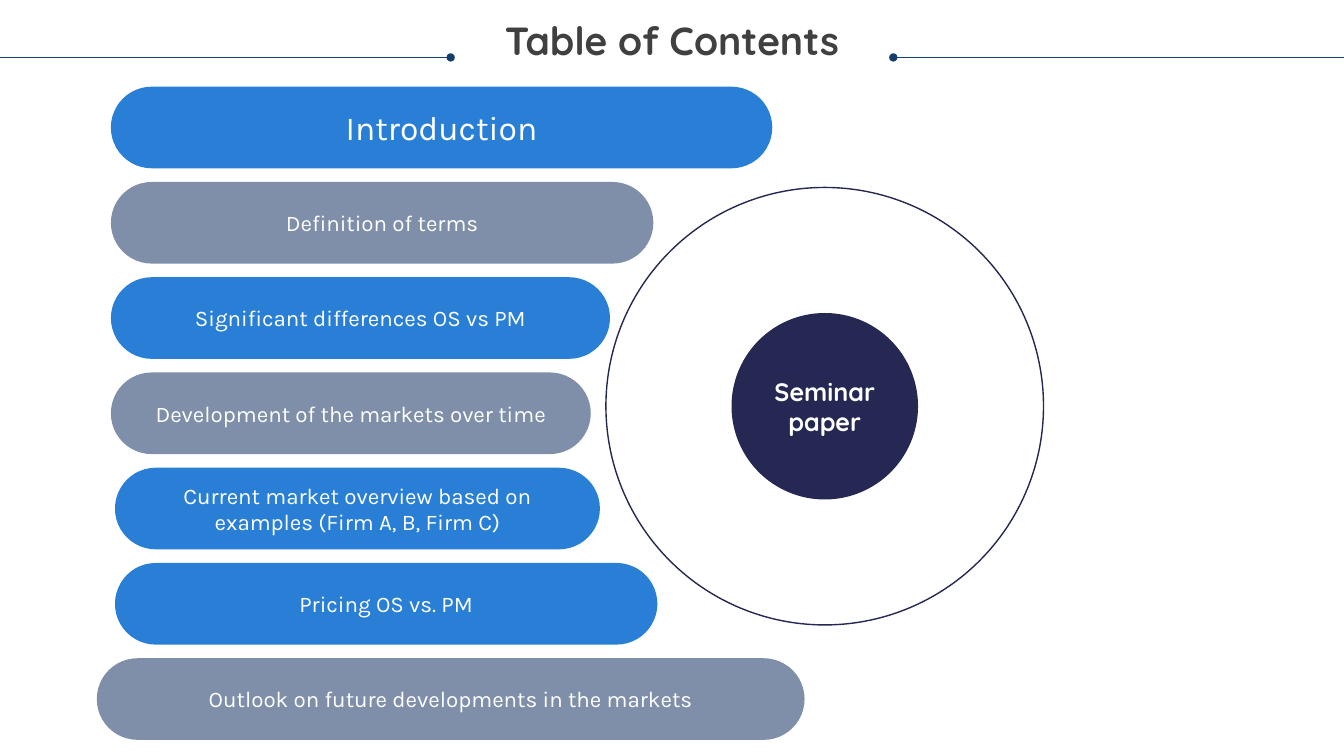
from pptx import Presentation
from pptx.dml.color import RGBColor
from pptx.enum.shapes import MSO_CONNECTOR as Link, MSO_SHAPE as Shape
from pptx.enum.text import MSO_ANCHOR as Anchor, PP_ALIGN as Align
from pptx.oxml.ns import qn
from pptx.util import Inches, Pt
from lxml.etree import SubElement

THEME = {
    "blue": "297FD5", "grey": "7F8FA9", "navy": "242852", "rule": "143F6A",
    "heading": "404040", "white": "FFFFFF",
    "title": 28, "lead": 24, "hub": 18, "entry": 16,
    "display": "Quicksand", "body": "Karla",
}
WIDTH, HEIGHT = 13.33, 7.5


def write(holder, words, size, font, color, bold=False):
    frame = holder.text_frame
    frame.text = words
    frame.word_wrap = True
    paragraph = frame.paragraphs[0]
    paragraph.alignment = Align.CENTER
    style = paragraph.runs[0].font
    style.size, style.name, style.bold = Pt(THEME[size]), THEME[font], bold
    style.color.rgb = RGBColor.from_string(THEME[color])
    return frame


def draw(kind, left, top, width, height, fill=None):
    figure = slide.shapes.add_shape(
        kind, Inches(left), Inches(top), Inches(width), Inches(height))
    figure.shadow.inherit = False
    if fill:
        figure.fill.solid()
        figure.fill.fore_color.rgb = RGBColor.from_string(THEME[fill])
        figure.line.fill.background()
    else:
        figure.fill.background()
    return figure


deck = Presentation()
deck.slide_width, deck.slide_height = Inches(WIDTH), Inches(HEIGHT)
slide = deck.slides.add_slide(deck.slide_layouts[6])

hub_x, hub_y = 8.18, 4.03
orbit_size, hub_size = 4.34, 1.85
orbit = draw(Shape.OVAL, hub_x - orbit_size / 2, hub_y - orbit_size / 2,
             orbit_size, orbit_size)
orbit.line.color.rgb = RGBColor.from_string(THEME["navy"])
orbit.line.width = Pt(1)

rule_y = 0.57
for outer, inner in ((0, 4.47), (WIDTH, 8.86)):
    rule = slide.shapes.add_connector(
        Link.STRAIGHT, Inches(outer), Inches(rule_y), Inches(inner), Inches(rule_y))
    rule.line.color.rgb = RGBColor.from_string(THEME["rule"])
    rule.line.width = Pt(0.5)
    SubElement(rule.line._get_or_add_ln(), qn("a:tailEnd"), type="oval")
    SubElement(rule._element.spPr, qn("a:effectLst"))

margin = 0.25
title = slide.shapes.add_textbox(
    Inches(margin), Inches(0.21), Inches(WIDTH - 2 * margin), Inches(0.85))
heading = write(title, "Table of Contents", "title", "display", "heading", True)
heading.margin_left = heading.margin_right = 0
heading.margin_top = heading.margin_bottom = 0
heading.paragraphs[0].line_spacing = 0.9

hub = draw(Shape.OVAL, hub_x - hub_size / 2, hub_y - hub_size / 2,
           hub_size, hub_size, "navy")
write(hub, "Seminar paper", "hub", "display", "white", True).vertical_anchor = Anchor.MIDDLE

chapters = [
    ("Introduction", 1.1, 6.56, "blue", "lead"),
    ("Definition of terms", 1.1, 5.38, "grey", "entry"),
    ("Significant differences OS vs PM", 1.1, 4.95, "blue", "entry"),
    ("Development of the markets over time", 1.1, 4.76, "grey", "entry"),
    ("Current market overview based on examples (Firm A, B, Firm C)",
     1.14, 4.81, "blue", "entry"),
    ("Pricing OS vs. PM", 1.14, 5.38, "blue", "entry"),
    ("Outlook on future developments in the markets", 0.96, 7.02, "grey", "entry"),
]
first_row, last_row, row_height = 0.86, 6.53, 0.81
row_pitch = (last_row - first_row) / (len(chapters) - 1)
for row, (words, left, width, fill, size) in enumerate(chapters):
    chapter = draw(Shape.ROUNDED_RECTANGLE, left, first_row + row * row_pitch,
                   width, row_height, fill)
    chapter.adjustments[0] = 0.5
    write(chapter, words, size, "body", "white").vertical_anchor = Anchor.MIDDLE

deck.save("out.pptx")
